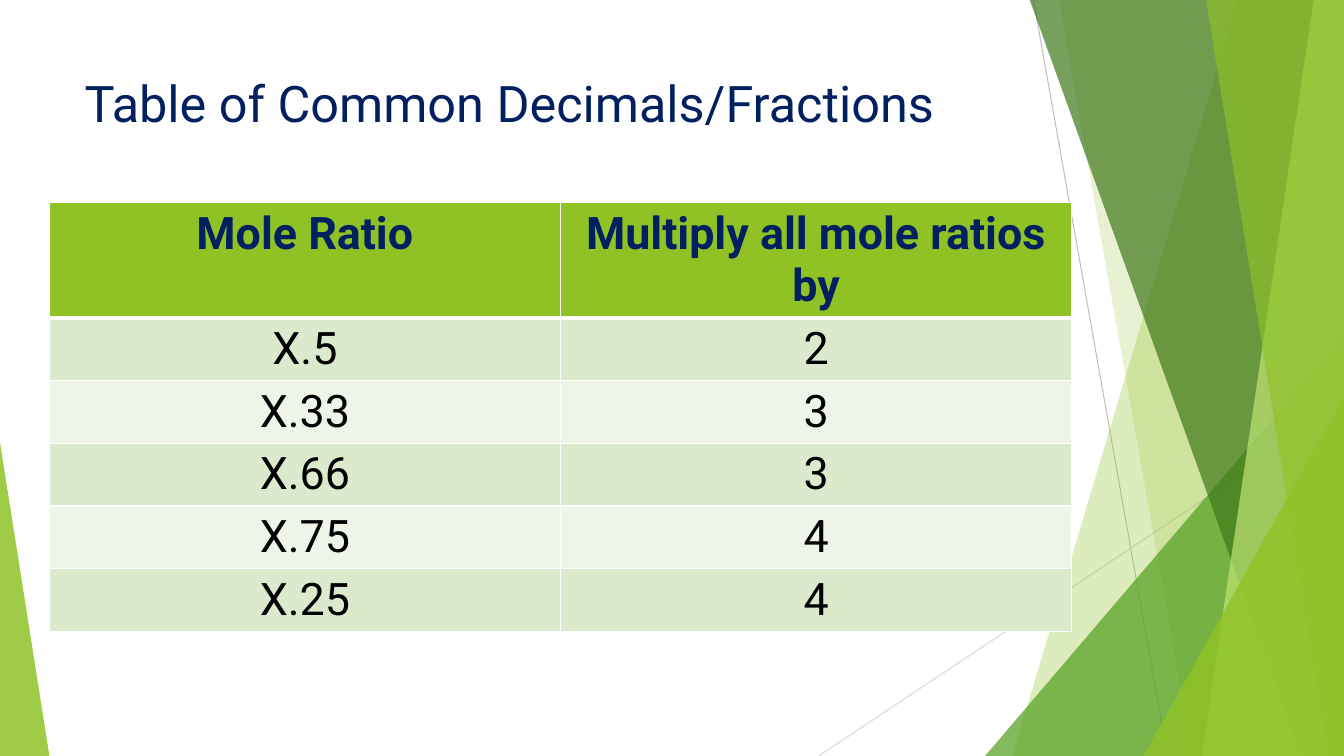
from lxml.etree import SubElement
from pptx import Presentation
from pptx.dml.color import RGBColor
from pptx.enum.shapes import MSO_CONNECTOR, MSO_SHAPE
from pptx.enum.text import MSO_ANCHOR, PP_ALIGN
from pptx.oxml import parse_xml
from pptx.oxml.ns import nsdecls, qn
from pptx.util import Pt

PX = 9144  # 100 px to the inch
WIDTH, HEIGHT = 1333, 750
FONT = "Roboto"
NAVY = RGBColor(0x00, 0x20, 0x60)
BLACK = RGBColor(0x00, 0x00, 0x00)
LIME = RGBColor(0x90, 0xC2, 0x26)
GREEN = RGBColor(0x54, 0xA0, 0x21)
FOREST = RGBColor(0x3F, 0x78, 0x19)
PALE_LIME = RGBColor(0xC0, 0xE4, 0x74)
BAND_DARK = RGBColor(0xDB, 0xE9, 0xCD)
BAND_LIGHT = RGBColor(0xEE, 0xF4, 0xE8)
GREY = RGBColor(0xBF, 0xBF, 0xBF)
LIGHT_GREY = RGBColor(0xD9, 0xD9, 0xD9)


def write(frame, text, size, color, bold=False, align=PP_ALIGN.LEFT):
    para = frame.paragraphs[0]
    para.alignment = align
    span = para.add_run()
    span.text = text
    span.font.name = FONT
    span.font.size = Pt(size)
    span.font.bold = bold
    span.font.color.rgb = color


def paint(shape, color, opacity):
    shape.shadow.inherit = False
    shape.line.fill.background()
    shape.fill.solid()
    shape.fill.fore_color.rgb = color
    tint = shape.fill._xPr.find(qn("a:solidFill"))[0]
    SubElement(tint, qn("a:alpha")).set("val", str(opacity * 1000))


deck = Presentation()
deck.slide_width, deck.slide_height = WIDTH * PX, HEIGHT * PX
page = deck.slides.add_slide(deck.slide_layouts[6])

# Thin background lines
for x1, y1, x2, y2, color in [
    (1025, 0, 1158, HEIGHT, GREY),
    (WIDTH, 403, 812, HEIGHT, LIGHT_GREY),
]:
    line = page.shapes.add_connector(
        MSO_CONNECTOR.STRAIGHT, x1 * PX, y1 * PX, x2 * PX, y2 * PX)
    line.line.color.rgb = color
    line.line.width = Pt(0.75)
    SubElement(line._element.spPr, qn("a:effectLst"))

# Translucent facets: slanted bands reach the right edge,
# triangles have their upright side at the left (0) or right (1)
for kind, *place, color, opacity in [
    ("band", 1228, 1004, LIME, 30),
    ("band", 1050, 1183, LIME, 20),
    ("triangle", 977, 333, 356, 1, GREEN, 72),
    ("band", 1021, 1291, FOREST, 70),
    ("band", 1303, 1192, PALE_LIME, 70),
    ("band", 1196, 1318, LIME, 65),
    ("triangle", 1134, 393, 199, 1, LIME, 80),
    ("triangle", 0, 439, 49, 0, LIME, 85),
]:
    if kind == "band":
        top_x, bottom_x = place
        outline = page.shapes.build_freeform(top_x, -1, scale=PX)
        outline.add_line_segments(
            [(WIDTH, -1), (WIDTH, HEIGHT), (bottom_x, HEIGHT)])
        facet = outline.convert_to_shape()
    else:
        left, top, width, apex = place
        facet = page.shapes.add_shape(
            MSO_SHAPE.ISOSCELES_TRIANGLE,
            left * PX, top * PX, width * PX, (HEIGHT - top) * PX)
        facet.adjustments[0] = apex
    paint(facet, color, opacity)

# Table of ratios
rows = [
    ("Mole Ratio", "Multiply all mole ratios by"),
    ("X.5", "2"),
    ("X.33", "3"),
    ("X.66", "3"),
    ("X.75", "4"),
    ("X.25", "4"),
]
HEADER_HEIGHT, ROW_HEIGHT = 114, 62
table = page.shapes.add_table(
    len(rows), 2, 49 * PX, 201 * PX, 1014 * PX,
    (HEADER_HEIGHT + ROW_HEIGHT * (len(rows) - 1)) * PX).table
for r, texts in enumerate(rows):
    header = r == 0
    table.rows[r].height = (HEADER_HEIGHT if header else ROW_HEIGHT) * PX
    for c, text in enumerate(texts):
        cell = table.cell(r, c)
        write(cell.text_frame, text, 32, NAVY if header else BLACK,
              bold=header, align=PP_ALIGN.CENTER)
        cell.fill.solid()
        cell.fill.fore_color.rgb = (
            LIME if header else BAND_DARK if r % 2 else BAND_LIGHT)
        # White cell borders, thicker under the header
        properties = cell._tc.get_or_add_tcPr()
        for i, side in enumerate("LRTB"):
            thick = (header and side == "B") or (r == 1 and side == "T")
            properties.insert(i, parse_xml(
                f'<a:ln{side} {nsdecls("a")} w="{Pt(3 if thick else 1)}">'
                '<a:solidFill><a:srgbClr val="FFFFFF"/></a:solidFill>'
                f'</a:ln{side}>'))

# Title
title = page.shapes.add_textbox(74 * PX, 67 * PX, 940 * PX, 144 * PX)
title.text_frame.word_wrap = True
title.text_frame.vertical_anchor = MSO_ANCHOR.TOP
write(title.text_frame, "Table of Common Decimals/Fractions", 36, NAVY)

deck.save("out.pptx")
